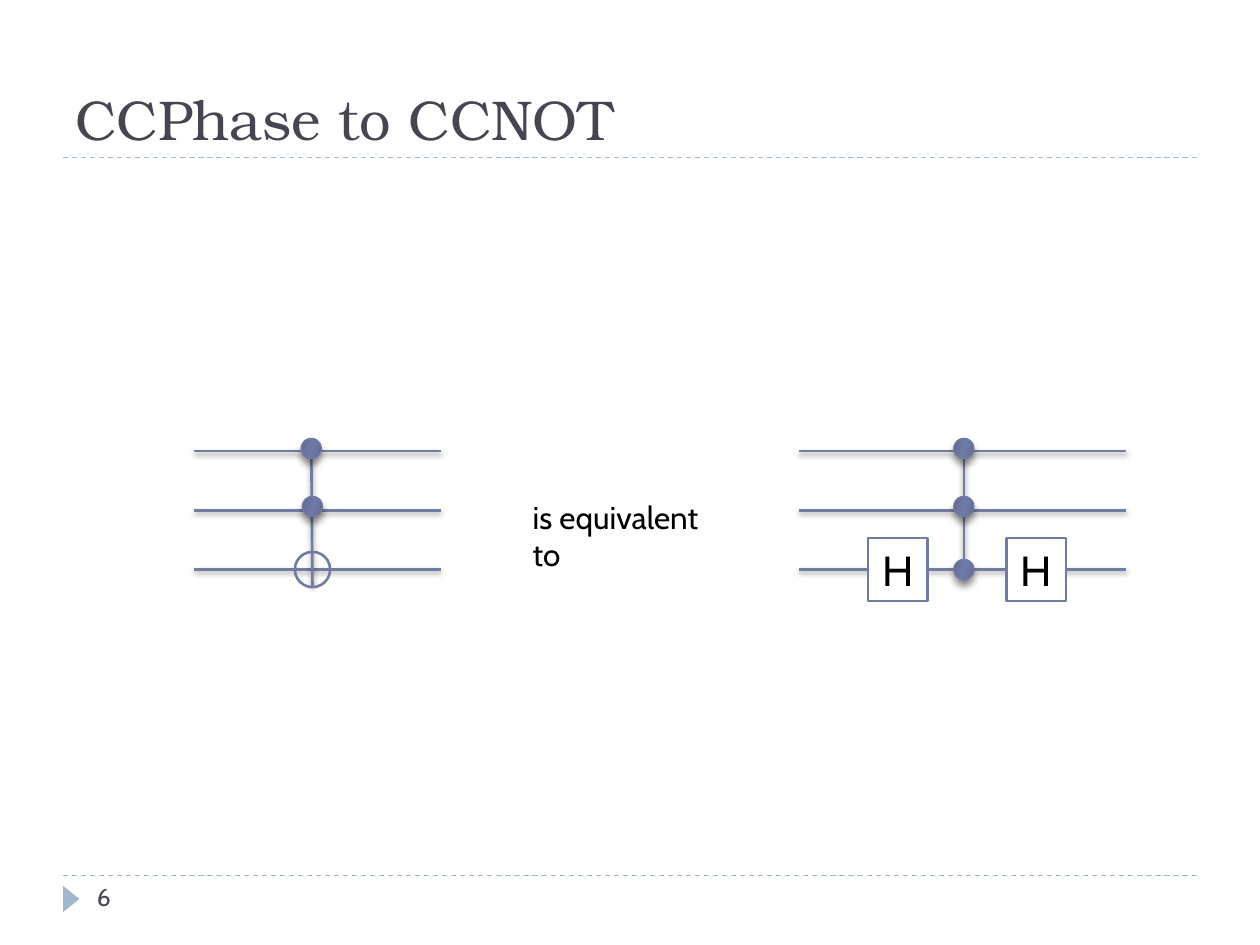
from pptx import Presentation
from pptx.dml.color import RGBColor
from pptx.enum.dml import MSO_LINE
from pptx.enum.shapes import MSO_CONNECTOR, MSO_SHAPE
from pptx.enum.text import MSO_ANCHOR, PP_ALIGN
from pptx.oxml import parse_xml
from pptx.oxml.ns import nsdecls
from pptx.util import Inches, Pt

THEME = {
    "rule": RGBColor.from_string("9FB8CD"),
    "gate": RGBColor.from_string("727CA3"),
    "paper": RGBColor.from_string("FFFFFF"),
    "dot": [(0, "5D6585"), (30, "6B759E"), (45, "6E79A7"),
            (55, "6E79A7"), (73, "6B759E"), (100, "5D6585")],
    "title": {"name": "TeX Gyre Bonum", "size": Pt(32), "color": "464653"},
    "label": {"name": "Cabin", "size": Pt(18), "color": "000000"},
    "gate_text": {"name": "Cabin", "size": Pt(24), "color": "000000"},
    "number": {"name": "Cabin", "size": Pt(14), "color": "464653"},
}
WIRE_YS = (3.58, 4.05, 4.52)
DOT = 0.16
shadows = []  # (shape, blur, distance), applied at the end


def add_line(shapes, start, end, color, width, shadow=(0, 0)):
    sp = shapes.add_connector(MSO_CONNECTOR.STRAIGHT,
                              *(Inches(v) for v in start + end))
    sp.line.color.rgb = color
    sp.line.width = Pt(width)
    shadows.append((sp, *shadow))
    return sp


def set_text(sp, text, style, **frame):
    tf = sp.text_frame
    for key, value in {"word_wrap": True, **frame}.items():
        setattr(tf, key, value)
    r = tf.paragraphs[0].add_run()
    r.text = text
    for key in ("name", "size"):
        setattr(r.font, key, style[key])
    r.font.color.rgb = RGBColor.from_string(style["color"])
    return tf.paragraphs[0]


prs = Presentation()
prs.slide_width, prs.slide_height = Inches(10), Inches(7.5)
s = prs.slides.add_slide(prs.slide_layouts[6])

# Dashed rules and page marker
for y in (6.95, 1.25):
    rule = add_line(s.shapes, (0.5, y), (9.5, y), THEME["rule"], 0.75)
    rule.line.dash_style = MSO_LINE.DASH
marker = s.shapes.add_shape(MSO_SHAPE.ISOSCELES_TRIANGLE, Inches(0.46),
                            Inches(7.07), Inches(0.21), Inches(0.13))
marker.rotation = 90
marker.fill.solid()
marker.fill.fore_color.rgb = THEME["rule"]
marker.line.fill.background()
marker.shadow.inherit = False

# Circuits: wires, control line, target ring, control dots, H gates
circuits = [
    {"wires": (6.34, 8.94), "control": ((7.65, 3.48), (7.65, 4.6)),
     "rings": [], "dots": [(7.65, 3.56), (7.65, 4.02), (7.65, 4.52)],
     "gates": [6.89, 7.99]},
    {"wires": (1.54, 3.5), "control": ((2.47, 3.48), (2.48, 4.65)),
     "rings": [(2.34, 4.38)], "dots": [(2.47, 3.56), (2.48, 4.02)],
     "gates": []},
]
for circuit in circuits:
    group = s.shapes.add_group_shape().shapes
    left, right = circuit["wires"]
    lines = [((left, y), (right, y)) for y in WIRE_YS] + [circuit["control"]]
    for start, end in lines:
        add_line(group, start, end, THEME["gate"], 1.5, (3, 1.6))

    for x, y in circuit["rings"]:
        ring = group.add_shape(MSO_SHAPE.OVAL, Inches(x), Inches(y),
                               Inches(0.28), Inches(0.28))
        ring.fill.background()
        ring.line.color.rgb = THEME["gate"]
        ring.line.width = Pt(1.5)
        ring.shadow.inherit = False

    for x, y in circuit["dots"]:
        dot = group.add_shape(MSO_SHAPE.OVAL, Inches(x - DOT / 2),
                              Inches(y - DOT / 2), Inches(DOT), Inches(DOT))
        dot.fill.gradient()
        dot.fill.gradient_angle = 344
        stops = "".join(f'<a:gs pos="{pos * 1000}"><a:srgbClr val="{rgb}"/></a:gs>'
                        for pos, rgb in THEME["dot"])
        grad = dot._element.spPr.gradFill
        grad.replace(grad.gsLst, parse_xml(
            f'<a:gsLst {nsdecls("a")}>{stops}</a:gsLst>'))
        dot.line.color.rgb = THEME["gate"]
        dot.line.width = Pt(0.75)
        shadows.append((dot, 4, 3.4))

    for x in circuit["gates"]:
        gate = group.add_shape(MSO_SHAPE.RECTANGLE, Inches(x), Inches(4.27),
                               Inches(0.47), Inches(0.5))
        gate.fill.solid()
        gate.fill.fore_color.rgb = THEME["paper"]
        gate.line.color.rgb = THEME["gate"]
        gate.line.width = Pt(1.5)
        gate.shadow.inherit = False
        p = set_text(gate, "H", THEME["gate_text"], margin_left=0,
                     margin_right=0, vertical_anchor=MSO_ANCHOR.MIDDLE)
        p.alignment = PP_ALIGN.CENTER

# Title, label between the circuits, page number
texts = [
    ("CCPhase to CCNOT", "title", (0.5, 0.17, 9, 1.08), MSO_ANCHOR.BOTTOM),
    ("is equivalent to", "label", (4.13, 3.9, 1.77, 0.4), MSO_ANCHOR.TOP),
    ("6", "number", (0.67, 6.95, 2.17, 0.4), MSO_ANCHOR.TOP),
]
for text, style, at, anchor in texts:
    box = s.shapes.add_textbox(*(Inches(v) for v in at))
    set_text(box, text, THEME[style], vertical_anchor=anchor)

# Shadows; an empty effect list switches the default one off
for sp, blur, distance in shadows:
    effect = (f'<a:outerShdw blurRad="{Pt(blur)}" dist="{Pt(distance)}" '
              'dir="5400000" rotWithShape="0"><a:srgbClr val="000000">'
              '<a:alpha val="40000"/></a:srgbClr></a:outerShdw>') if blur else ""
    sp._element.spPr.append(parse_xml(
        f'<a:effectLst {nsdecls("a")}>{effect}</a:effectLst>'))

prs.save("out.pptx")
